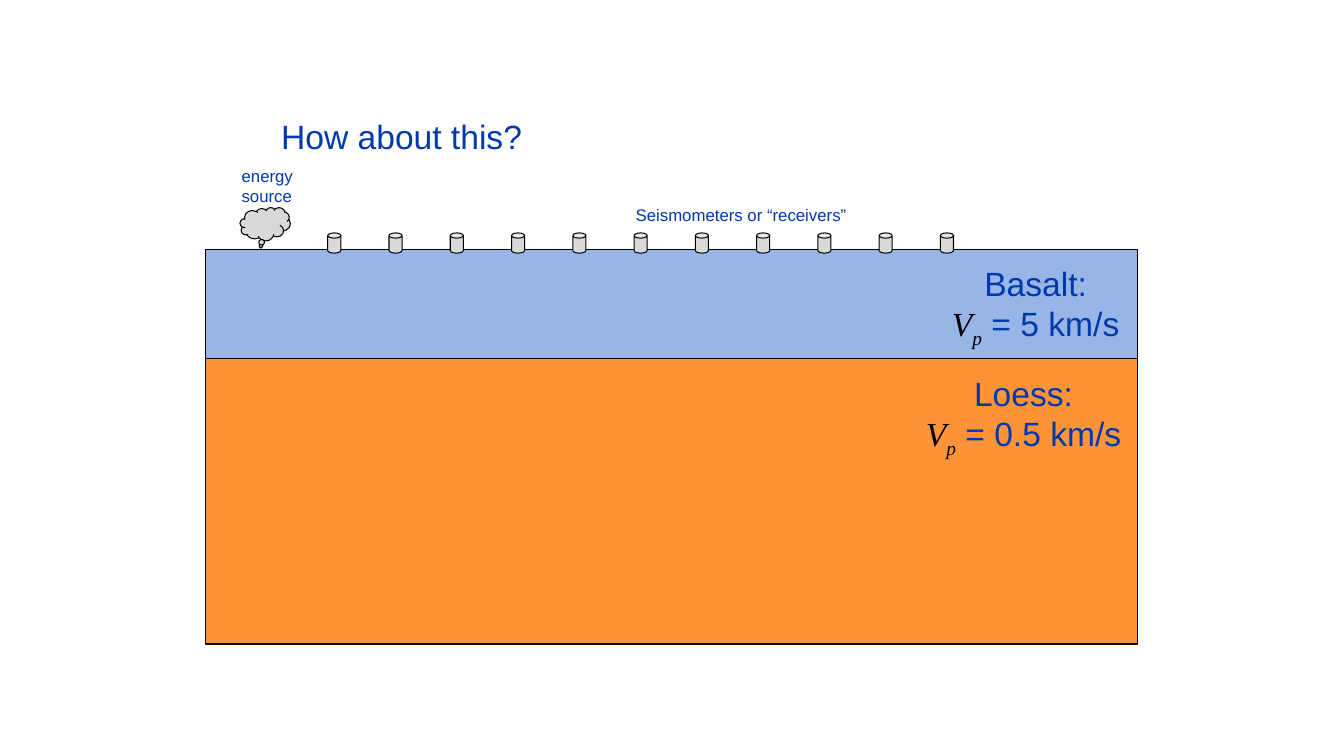
from dataclasses import dataclass

from pptx import Presentation
from pptx.dml.color import RGBColor
from pptx.enum import shapes, text
from pptx.util import Cm, Pt

BLUE, BLACK, GREY = "0039AC", "000000", "D9D9D9"
LAYER_LEFT, LAYER_WIDTH = 5.18, 23.5
FIRST_RECEIVER, LAST_RECEIVER, RECEIVERS = 8.26, 23.7, 11


@dataclass
class Box:
    left: float
    top: float
    width: float
    height: float

    def lengths(self) -> tuple:
        return Cm(self.left), Cm(self.top), Cm(self.width), Cm(self.height)


@dataclass
class Layer:
    rock: str
    speed: str
    color: str
    top: float
    height: float
    label: Box


@dataclass
class Caption:
    lines: list[str]
    box: Box


LAYERS = [
    Layer("Basalt:", " = 5 km/s", "97B5E6", 6.3, 2.74, Box(23.7, 6.5, 4.8, 2.31)),
    Layer("Loess:", " = 0.5 km/s", "FF9338", 9.04, 7.19, Box(23.04, 9.27, 5.51, 2.31)),
]
CAPTIONS = [
    Caption(["energy", "source"], Box(5.84, 4.06, 1.8, 1.27)),
    Caption(["Seismometers or “receivers”"], Box(15.77, 5.03, 6.02, 0.76)),
]


def rgb(color: str) -> RGBColor:
    return RGBColor.from_string(color)


def style_font(font, size: float, color: str = BLUE, name: str = "Arial") -> None:
    font.size, font.name = Pt(size), name
    font.color.rgb = rgb(color)


def add_outlined(s, kind, box: Box, color: str, adjustments: tuple = ()) -> None:
    """Add a filled shape with a thin black outline."""
    sp = s.shapes.add_shape(kind, *box.lengths())
    for i, value in enumerate(adjustments):
        sp.adjustments[i] = value
    sp.shadow.inherit = False
    sp.fill.solid()
    sp.fill.fore_color.rgb = rgb(color)
    sp.line.color.rgb = rgb(BLACK)
    sp.line.width = Pt(0.75)


def add_text(s, box: Box, lines: list[str], size: float) -> text:
    tf = s.shapes.add_textbox(*box.lengths()).text_frame
    tf.word_wrap = False
    tf.auto_size = text.MSO_AUTO_SIZE.SHAPE_TO_FIT_TEXT
    tf.text = "\n".join(lines)
    for p in tf.paragraphs:
        style_font(p.font, size)
    return tf


def add_layer(s, layer: Layer) -> None:
    box = Box(LAYER_LEFT, layer.top, LAYER_WIDTH, layer.height)
    add_outlined(s, shapes.MSO_SHAPE.RECTANGLE, box, layer.color)
    tf = add_text(s, layer.label, [layer.rock, ""], 24)
    for p in tf.paragraphs:
        p.alignment = text.PP_ALIGN.CENTER
    velocity = tf.paragraphs[1]
    for symbol in "Vp":
        r = velocity.add_run()
        r.text = symbol
        style_font(r.font, 24, BLACK, "Times New Roman")
        r.font.italic = True
    r.font._element.set("baseline", "-25000")
    velocity.add_run().text = layer.speed


def set_title(s, title: str) -> None:
    sp = s.shapes.title
    sp.left, sp.top, sp.width, sp.height = Box(6.83, 2.79, 6.65, 1.27).lengths()
    tf = sp.text_frame
    tf.text = title
    tf.word_wrap = False
    tf.auto_size = text.MSO_AUTO_SIZE.SHAPE_TO_FIT_TEXT
    tf.vertical_anchor = text.MSO_ANCHOR.TOP
    p = tf.paragraphs[0]
    p.alignment = text.PP_ALIGN.LEFT
    style_font(p.font, 24)


def main() -> None:
    prs = Presentation()
    prs.slide_width, prs.slide_height = Cm(33.87), Cm(19.05)
    s = prs.slides.add_slide(prs.slide_layouts[5])
    set_title(s, "How about this?")
    for layer in LAYERS:
        add_layer(s, layer)
    add_outlined(s, shapes.MSO_SHAPE.CLOUD_CALLOUT, Box(6.05, 5.23, 1.27, 0.84),
                 GREY, (-0.09, 0.69))
    pitch = (LAST_RECEIVER - FIRST_RECEIVER) / (RECEIVERS - 1)
    for i in range(RECEIVERS):
        box = Box(FIRST_RECEIVER + i * pitch, 5.87, 0.33, 0.51)
        add_outlined(s, shapes.MSO_SHAPE.CAN, box, GREY, (0.4,))
    for caption in CAPTIONS:
        add_text(s, caption.box, caption.lines, 12)
    prs.save("out.pptx")


if __name__ == "__main__":
    main()
